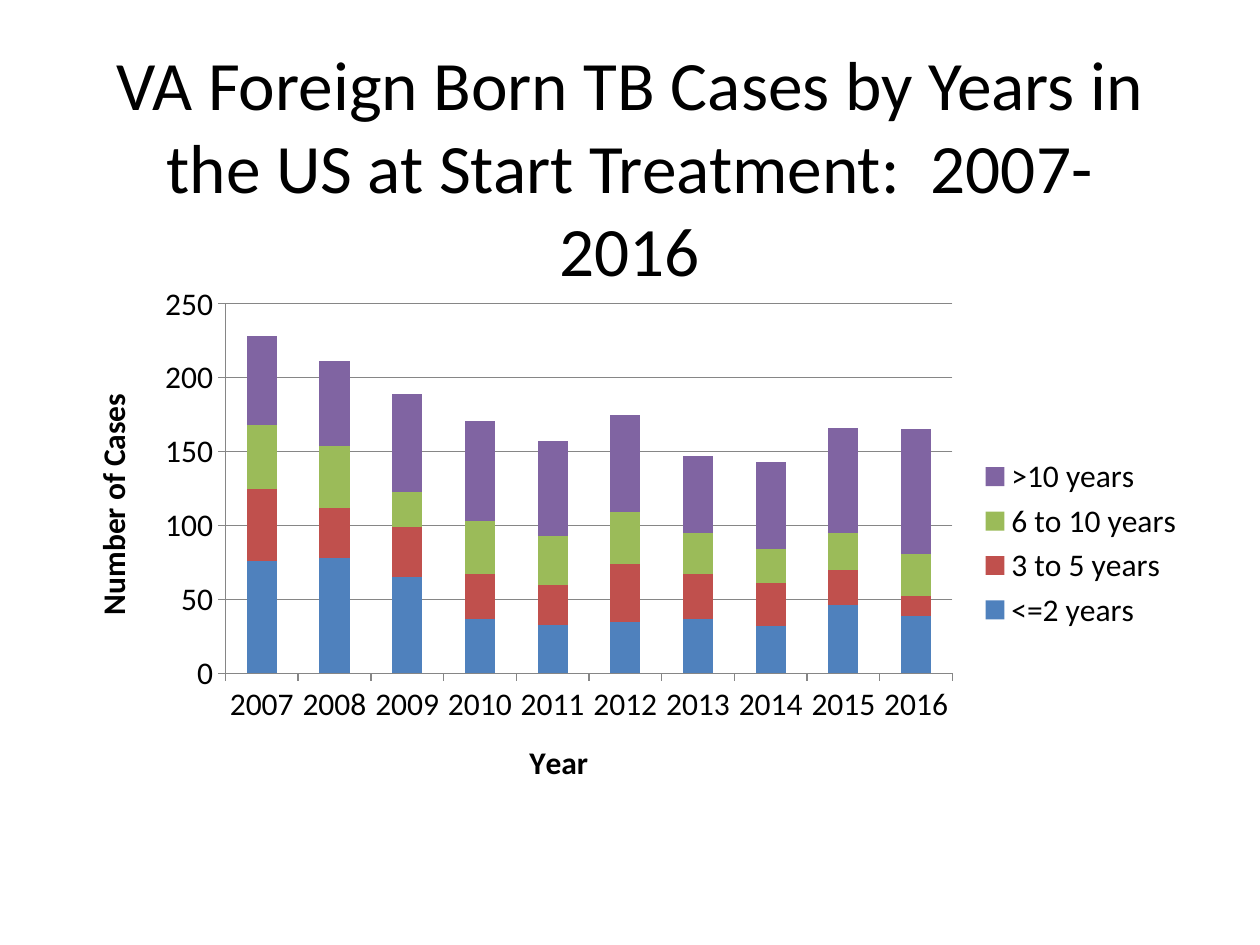
from pptx import Presentation
from pptx.chart.data import CategoryChartData
from pptx.dml.color import RGBColor
from pptx.enum.chart import XL_CHART_TYPE, XL_LEGEND_POSITION, XL_TICK_MARK
from pptx.enum.text import MSO_ANCHOR, PP_ALIGN
from pptx.util import Inches, Pt

STACKED = XL_CHART_TYPE.COLUMN_STACKED
RIGHT = XL_LEGEND_POSITION.RIGHT
OUTSIDE = XL_TICK_MARK.OUTSIDE
MIDDLE = MSO_ANCHOR.MIDDLE
CENTER = PP_ALIGN.CENTER

WIDTH, HEIGHT = Inches(10), Inches(7.5)
TITLE = "VA Foreign Born TB Cases by Years in the US at Start Treatment:  2007-2016"
TITLE_AREA = (0.075, 0.09, 0.85, 0.17)
CHART_AREA = (0.05, 0.29, 0.9, 0.57)
TITLE_FONT = {"name": "Calibri", "size": Pt(39.6), "bold": False}
CHART_FONT = {"name": "Calibri", "size": Pt(18), "bold": False}
AXIS_TITLE_FONT = {**CHART_FONT, "bold": True}
INK, RULE = "000000", "868686"
YEARS = [str(year) for year in range(2007, 2017)]
CASES = {
    "<=2 years": ("4F81BD", (76, 78, 65, 37, 33, 35, 37, 32, 46, 39)),
    "3 to 5 years": ("C0504D", (49, 34, 34, 30, 27, 39, 30, 29, 24, 13)),
    "6 to 10 years": ("9BBB59", (43, 42, 24, 36, 33, 35, 28, 23, 25, 29)),
    ">10 years": ("8064A2", (60, 57, 66, 68, 64, 66, 52, 59, 71, 84)),
}


def color(target, value):
    """Give a font, or a solid fill, a hex colour."""
    if hasattr(target, "solid"):
        target.solid()
        target.fore_color.rgb = RGBColor.from_string(value)
    else:
        target.color.rgb = RGBColor.from_string(value)


def apply(target, values):
    """Set every attribute named in a dict."""
    for name, value in values.items():
        setattr(target, name, value)


def place(area):
    """Turn shares of the slide into left, top, width and height."""
    return [int(share * side) for share, side in zip(area, (WIDTH, HEIGHT) * 2)]


def write(para, text, font):
    """Add one formatted span of text to a paragraph."""
    span = para.add_run()
    span.text = text
    apply(span.font, font)
    color(span.font, INK)


def add_title(page):
    """Add the centred heading."""
    frame = page.shapes.add_textbox(*place(TITLE_AREA)).text_frame
    apply(frame, {"word_wrap": True, "vertical_anchor": MIDDLE})
    para = frame.paragraphs[0]
    para.alignment = CENTER
    write(para, TITLE, TITLE_FONT)


def style_axis(axis, title, gridlines):
    """Format an axis with its title, ticks and gridlines."""
    apply(axis, {"has_major_gridlines": gridlines, "major_tick_mark": OUTSIDE})
    write(axis.axis_title.text_frame.paragraphs[0], title, AXIS_TITLE_FONT)
    lines = [axis.format.line]
    if gridlines:
        lines.append(axis.major_gridlines.format.line)
    for line in lines:
        line.width = Pt(0.75)
        color(line.fill, RULE)


def add_cases_chart(page):
    """Add the stacked columns of cases by year."""
    data = CategoryChartData(number_format="General")
    data.categories = YEARS
    for name, (_, values) in CASES.items():
        data.add_series(name, values)
    chart = page.shapes.add_chart(STACKED, *place(CHART_AREA), data).chart
    apply(chart, {"has_title": False, "has_legend": True})
    apply(chart.font, CHART_FONT)
    color(chart.font, INK)
    apply(chart.legend, {"position": RIGHT, "include_in_layout": False})
    style_axis(chart.category_axis, "Year", False)
    style_axis(chart.value_axis, "Number of Cases", True)
    apply(chart.value_axis, {"minimum_scale": 0, "maximum_scale": 250, "major_unit": 50})
    plot = chart.plots[0]
    apply(plot, {"gap_width": 141, "overlap": 100, "vary_by_categories": False})
    for series in plot.series:
        color(series.format.fill, CASES[series.name][0])


def main():
    """Build and save the one-slide deck."""
    deck = Presentation()
    apply(deck, {"slide_width": WIDTH, "slide_height": HEIGHT})
    page = deck.slides.add_slide(deck.slide_layouts[6])
    add_title(page)
    add_cases_chart(page)
    deck.save("out.pptx")


if __name__ == "__main__":
    main()
